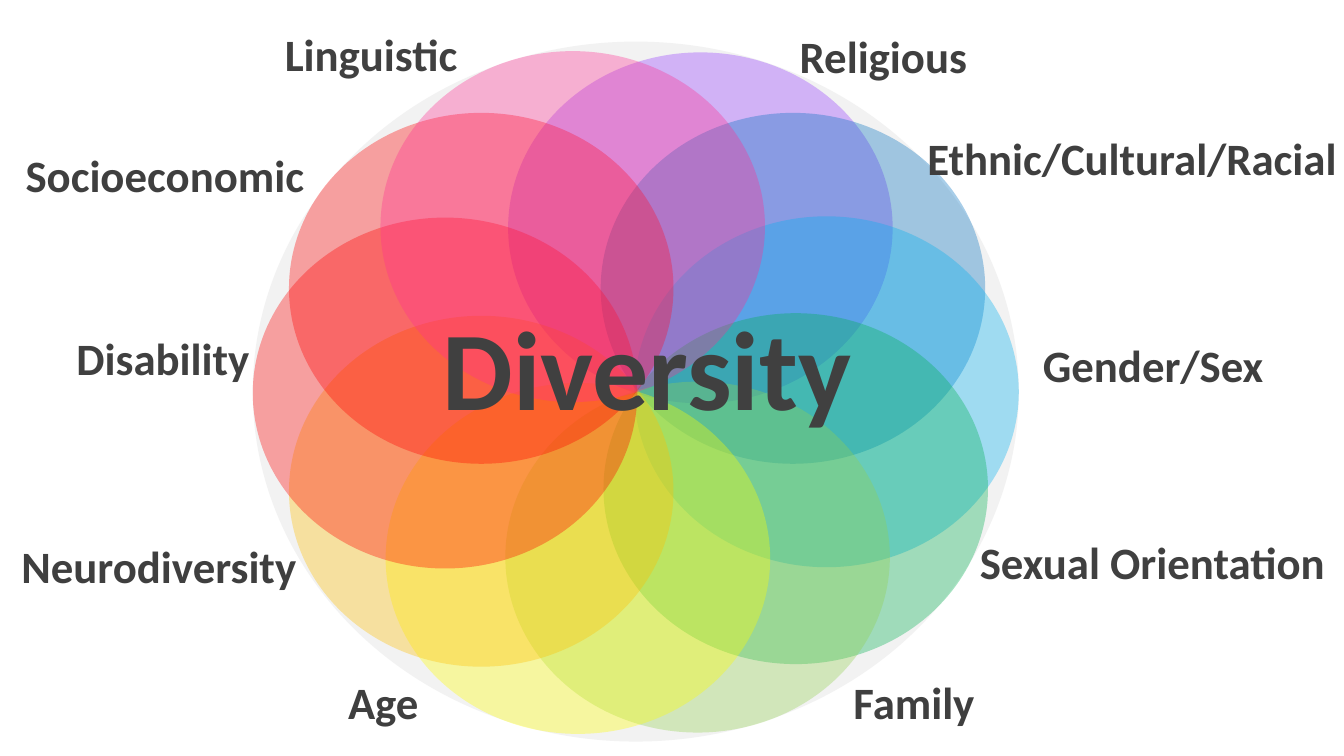
"""Build a slide of ten overlapping petals that name the sides of diversity."""
from lxml.etree import SubElement
from pptx import Presentation
from pptx.dml.color import RGBColor
from pptx.enum.shapes import MSO_SHAPE
from pptx.enum.text import MSO_ANCHOR, PP_ALIGN
from pptx.oxml.ns import qn
from pptx.util import Pt

HUES = {
    "disc": "F2F2F2", "ink": "404040", "soft": "3F3F3F",
    "violet": "9437FF", "blue": "0070C0", "sky": "00B0F0",
    "green": "00B050", "lime": "92D050", "yellow": "FFFF00",
    "amber": "FFC000", "red": "FF0000", "pink": "FF2F92",
}
FONT = "Calibri"
ALPHA = 34
PETAL = (206, 188)
PETALS = [
    ("violet", 272.2, 28.1),
    ("blue", 321.8, 60.5),
    ("sky", 339.8, 115.9),
    ("green", 323.3, 167.8),
    ("lime", 270.7, 204.5),
    ("yellow", 206.6, 205.2),
    ("amber", 154.8, 169.2),
    ("red", 135.4, 116.6),
    ("red", 154.8, 60.5),
    ("pink", 203.8, 27.4),
]
LABELS = [
    ("Linguistic", 152.6, 14.4, 129, "ink"),
    ("Socioeconomic", 13.7, 79.2, 166.3, "soft"),
    ("Disability", 41, 177.1, 161.3, "ink"),
    ("Neurodiversity", 11.5, 288.7, 191.5, "soft"),
    ("Age", 186.5, 361.4, 58.3, "soft"),
    ("Religious", 428.4, 15.1, 129, "soft"),
    ("Ethnic/Cultural/Racial", 496.8, 69.8, 234, "soft"),
    ("Gender/Sex", 558.7, 180.7, 161.3, "soft"),
    ("Sexual Orientation", 524.9, 286.6, 193.7, "ink"),
    ("Family", 457.2, 361.4, 87.8, "soft"),
]


def add_oval(group, hue, left, top, size, alpha=None):
    oval = group.shapes.add_shape(MSO_SHAPE.OVAL, Pt(left), Pt(top), *map(Pt, size))
    oval.shadow.inherit = False
    oval.line.fill.background()
    oval.fill.solid()
    oval.fill.fore_color.rgb = RGBColor.from_string(HUES[hue])
    if alpha:
        tint = oval.element.find(".//" + qn("a:srgbClr"))
        SubElement(tint, qn("a:alpha"), val=str(alpha * 1000))


def set_text(shape, text, size, hue, align):
    frame = shape.text_frame
    frame.word_wrap = True
    frame.vertical_anchor = MSO_ANCHOR.TOP
    frame.margin_left = frame.margin_right = 0
    frame.margin_top = frame.margin_bottom = 0
    frame.text = text
    para = frame.paragraphs[0]
    para.alignment = align
    font = para.font
    font.name, font.size, font.bold = FONT, Pt(size), True
    font.color.rgb = RGBColor.from_string(HUES[hue])


def add_label(slide, text, left, top, width, hue):
    box = slide.shapes.add_textbox(Pt(left), Pt(top), Pt(width), Pt(29))
    set_text(box, text, 24, hue, PP_ALIGN.LEFT)


def place_title(slide, text):
    title = slide.shapes.title
    title.left, title.top = Pt(224.6), Pt(159.8)
    title.width, title.height = Pt(244), Pt(72.7)
    set_text(title, text, 60, "ink", PP_ALIGN.CENTER)
    slide.shapes.element.append(title.element)


def main():
    deck = Presentation()
    deck.slide_width, deck.slide_height = Pt(720), Pt(405)
    slide = deck.slides.add_slide(deck.slide_layouts[5])
    wheel = slide.shapes.add_group_shape()
    add_oval(wheel, "disc", 135.4, 22.3, (410.4, 375))
    for hue, left, top in PETALS:
        add_oval(wheel, hue, left, top, PETAL, ALPHA)
    place_title(slide, "Diversity")
    for label in LABELS:
        add_label(slide, *label)
    deck.save("out.pptx")


if __name__ == "__main__":
    main()
